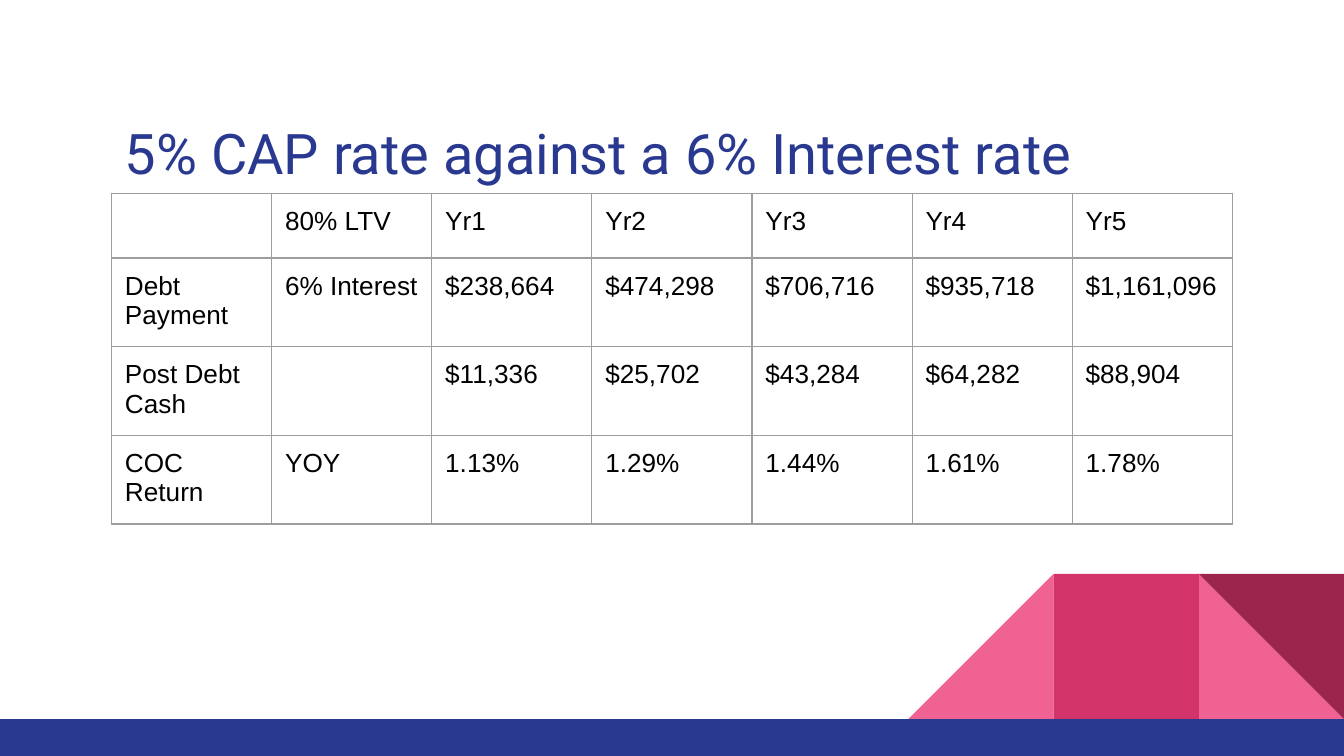
from lxml import etree
from pptx import Presentation
from pptx.dml.color import RGBColor
from pptx.enum.shapes import MSO_SHAPE
from pptx.enum.text import MSO_ANCHOR
from pptx.oxml.ns import qn
from pptx.util import Inches, Pt

TRIANGLE = MSO_SHAPE.RIGHT_TRIANGLE
RECTANGLE = MSO_SHAPE.RECTANGLE
TOP = MSO_ANCHOR.TOP
NAVY = "2A3990"
PINK = "F06292"
BORDER = "9E9E9E"


def color(hex_value):
    return RGBColor.from_string(hex_value)


def set_font(paragraph, name, size, hex_value):
    paragraph.font.name = name
    paragraph.font.size = Pt(size)
    paragraph.font.bold = False
    paragraph.font.color.rgb = color(hex_value)


deck = Presentation()
deck.slide_width = Inches(10)
deck.slide_height = Inches(10 * 9 / 16)
slide = deck.slides.add_slide(deck.slide_layouts[6])

tile = 1.08
tile_top = 4.27
decorations = [
    (TRIANGLE, 10 - tile, tile_top, tile, tile, PINK),
    (TRIANGLE, 10 - 3 * tile, tile_top, tile, tile, PINK),
    (RECTANGLE, 10 - 2 * tile, tile_top, tile, tile, "D23369"),
    (TRIANGLE, 10 - tile, tile_top, tile, tile, "9C254D"),
    (RECTANGLE, 0, tile_top + tile, 10, 0.28, NAVY),
]
drawn = []
for kind, left, top, width, height, fill in decorations:
    piece = slide.shapes.add_shape(
        kind, Inches(left), Inches(top), Inches(width), Inches(height))
    piece.shadow.inherit = False
    piece.fill.solid()
    piece.fill.fore_color.rgb = color(fill)
    piece.line.fill.background()
    drawn.append(piece)
drawn[1].element.spPr.find(qn("a:xfrm")).set("flipH", "1")
drawn[3].rotation = 180

rows = [
    ["", "80% LTV", "Yr1", "Yr2", "Yr3", "Yr4", "Yr5"],
    ["Debt Payment", "6% Interest", "$238,664", "$474,298", "$706,716", "$935,718", "$1,161,096"],
    ["Post Debt Cash", "", "$11,336", "$25,702", "$43,284", "$64,282", "$88,904"],
    ["COC Return", "YOY", "1.13%", "1.29%", "1.44%", "1.61%", "1.78%"],
]
row_heights = [0.48, 0.66, 0.66, 0.66]
table_width = 8.34
returns = slide.shapes.add_table(
    len(rows), len(rows[0]), Inches(0.83), Inches(1.44),
    Inches(table_width), Inches(sum(row_heights))).table
returns.first_row = False
returns.horz_banding = False
for column in returns.columns:
    column.width = Inches(table_width / len(rows[0]))

for r, values in enumerate(rows):
    returns.rows[r].height = Inches(row_heights[r])
    for c, value in enumerate(values):
        cell = returns.cell(r, c)
        cell.text = value
        cell.margin_left = cell.margin_right = Inches(0.1)
        cell.margin_top = cell.margin_bottom = Inches(0.1)
        cell.vertical_anchor = TOP
        set_font(cell.text_frame.paragraphs[0], "Arial", 14, "000000")
        properties = cell._tc.get_or_add_tcPr()
        for side in ("a:lnL", "a:lnR", "a:lnT", "a:lnB"):
            edge = etree.SubElement(properties, qn(side), w=str(Pt(0.75)))
            edge_fill = etree.SubElement(edge, qn("a:solidFill"))
            etree.SubElement(edge_fill, qn("a:srgbClr"), val=BORDER)
        cell.fill.background()

title = slide.shapes.add_textbox(
    Inches(0.83), Inches(0.78), Inches(8.49), Inches(0.66)).text_frame
title.word_wrap = True
title.vertical_anchor = TOP
title.margin_left = title.margin_right = Inches(0.1)
title.margin_top = title.margin_bottom = Inches(0.1)
title.text = "5% CAP rate against a 6% Interest rate"
set_font(title.paragraphs[0], "Roboto", 30, NAVY)

deck.save("out.pptx")
